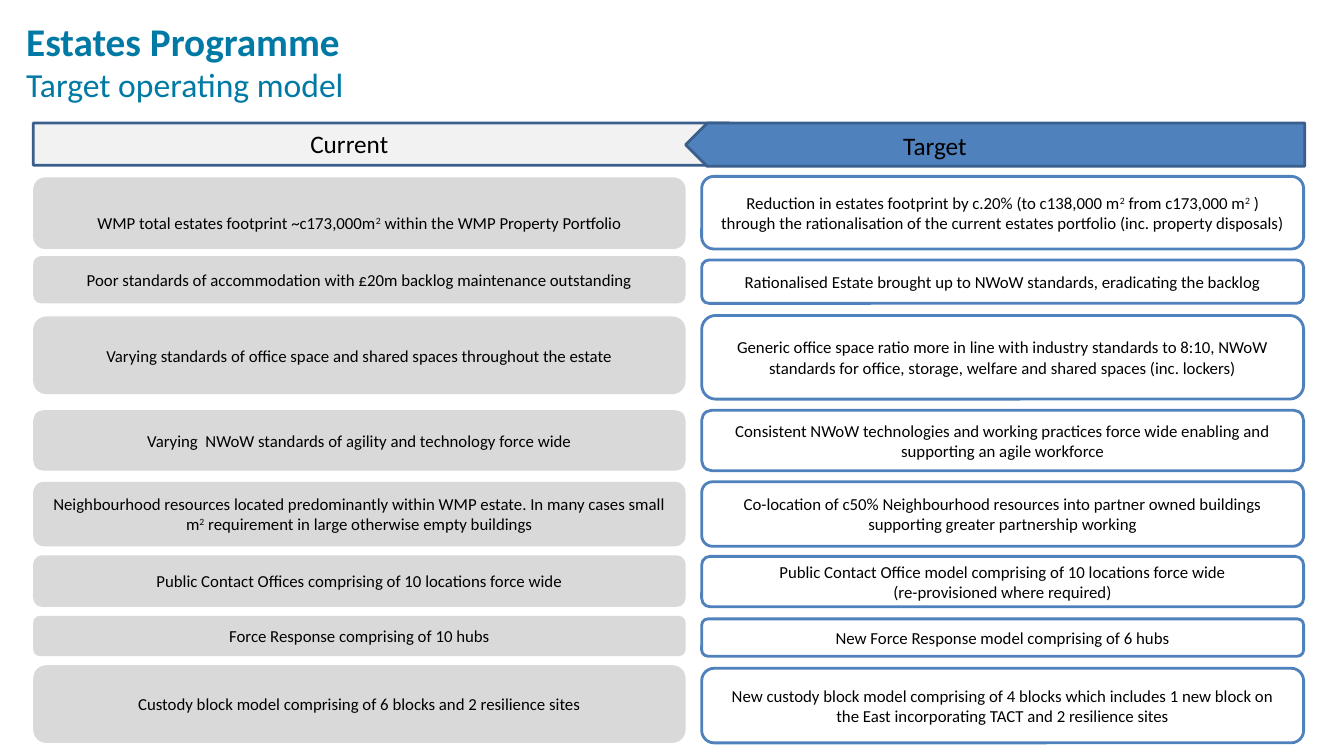
from pptx import Presentation
from pptx.dml.color import RGBColor
from pptx.enum.shapes import MSO_SHAPE
from pptx.enum.text import MSO_ANCHOR, MSO_AUTO_SIZE, PP_ALIGN
from pptx.util import Inches, Pt

ROUNDED = MSO_SHAPE.ROUNDED_RECTANGLE
PENTAGON = MSO_SHAPE.PENTAGON
MIDDLE, TOP = MSO_ANCHOR.MIDDLE, MSO_ANCHOR.TOP
LEFT, CENTER = PP_ALIGN.LEFT, PP_ALIGN.CENTER
NO_AUTOFIT = MSO_AUTO_SIZE.NONE

TEAL = RGBColor(0x00, 0x7A, 0xA5)
BLACK = RGBColor(0x00, 0x00, 0x00)
WHITE = RGBColor(0xFF, 0xFF, 0xFF)
GREY = RGBColor(0xD9, 0xD9, 0xD9)
PALE_GREY = RGBColor(0xF2, 0xF2, 0xF2)
BLUE = RGBColor(0x4F, 0x81, 0xBD)
DARK_BLUE = RGBColor(0x3A, 0x5F, 0x8C)

FONT = "Calibri"
CURRENT_LEFT, CURRENT_WIDTH = 0.33, 6.47
TARGET_LEFT, TARGET_WIDTH = 6.96, 5.97

# Each box: top, height, text; ^ marks the start and end of a superscript.
CURRENT_BOXES = [
    (1.76, 0.71, "WMP total estates footprint ~c173,000m^2^ within the WMP Property Portfolio"),
    (2.54, 0.47, "Poor standards of accommodation with £20m backlog maintenance outstanding"),
    (3.14, 0.77, "Varying standards of office space and shared spaces throughout the estate"),
    (4.07, 0.60, "Varying  NWoW standards of agility and technology force wide"),
    (4.78, 0.64, "Neighbourhood resources located predominantly within WMP estate. "
                 "In many cases small m^2^ requirement in large otherwise empty buildings"),
    (5.51, 0.51, "Public Contact Offices comprising of 10 locations force wide"),
    (6.11, 0.40, "Force Response comprising of 10 hubs"),
    (6.60, 0.77, "Custody block model comprising of 6 blocks and 2 resilience sites"),
]
TARGET_BOXES = [
    (1.75, 0.72, "Reduction in estates footprint by c.20% (to c138,000 m^2^ from c173,000 m^2^ ) "
                 "through the rationalisation of the current estates portfolio "
                 "(inc. property disposals)"),
    (2.58, 0.43, "Rationalised Estate brought up to NWoW standards, eradicating the backlog"),
    (3.13, 0.83, "Generic office space ratio more in line with industry standards to 8:10, NWoW "
                 "standards for office, storage, welfare and shared spaces (inc. lockers)"),
    (4.07, 0.60, "Consistent NWoW technologies and working practices force wide enabling and "
                 "supporting an agile workforce"),
    (4.78, 0.64, "Co-location of c50% Neighbourhood resources into partner owned buildings "
                 "supporting greater partnership working"),
    (5.52, 0.50, "Public Contact Office model comprising of 10 locations force wide\n"
                 "(re-provisioned where required)"),
    (6.14, 0.37, "New Force Response model comprising of 6 hubs"),
    (6.63, 0.74, "New custody block model comprising of 4 blocks which includes 1 new block on "
                 "the East incorporating TACT and 2 resilience sites"),
]


def style_font(font, size, color, bold=False):
    font.name = FONT
    font.size = Pt(size)
    font.color.rgb = color
    font.bold = bold


def set_margins(frame, left, top, right, bottom):
    frame.margin_left, frame.margin_top = Inches(left), Inches(top)
    frame.margin_right, frame.margin_bottom = Inches(right), Inches(bottom)


def add_title(slide, heading, subheading):
    title = slide.shapes.title
    title.left, title.top = Inches(0.26), Inches(0.15)
    title.width, title.height = Inches(12), Inches(1.2)
    frame = title.text_frame
    frame.auto_size = NO_AUTOFIT
    frame.vertical_anchor = TOP
    set_margins(frame, 0, 0.02, 0, 0)
    paragraph = frame.paragraphs[0]
    paragraph.alignment = LEFT
    heading_run = paragraph.add_run()
    heading_run.text = heading
    style_font(heading_run.font, 28, TEAL, bold=True)
    paragraph.add_line_break()
    subheading_run = paragraph.add_run()
    subheading_run.text = subheading
    style_font(subheading_run.font, 24, TEAL)


def add_filled_shape(slide, kind, left, top, width, height, fill, line=None):
    shape = slide.shapes.add_shape(kind, Inches(left), Inches(top), Inches(width), Inches(height))
    shape.shadow.inherit = False
    shape.fill.solid()
    shape.fill.fore_color.rgb = fill
    if line is None:
        shape.line.fill.background()
    else:
        shape.line.color.rgb = line
        shape.line.width = Pt(2)
    return shape


def add_header_label(slide, left, top, width, text):
    box = slide.shapes.add_textbox(Inches(left), Inches(top), Inches(width), Inches(0.4))
    box.text_frame.word_wrap = True
    paragraph = box.text_frame.paragraphs[0]
    paragraph.text = text
    style_font(paragraph.font, 18, BLACK)


def write_paragraph(paragraph, text):
    """Write centred text, raising the parts between ^ marks."""
    paragraph.alignment = CENTER
    style_font(paragraph.font, 12, BLACK)
    for index, part in enumerate(text.split("^")):
        run = paragraph.add_run()
        run.text = part
        if index % 2:
            run.font._element.set("baseline", "30000")


def add_statement(slide, left, top, width, height, text, fill, line=None):
    shape = add_filled_shape(slide, ROUNDED, left, top, width, height, fill, line)
    frame = shape.text_frame
    frame.word_wrap = True
    frame.vertical_anchor = MIDDLE
    set_margins(frame, 0.14, 0.07, 0.14, 0.07)
    for index, line_text in enumerate(text.split("\n")):
        paragraph = frame.add_paragraph() if index else frame.paragraphs[0]
        write_paragraph(paragraph, line_text)
    return shape


def main():
    presentation = Presentation()
    presentation.slide_width, presentation.slide_height = Inches(13.33), Inches(7.5)
    slide = presentation.slides.add_slide(presentation.slide_layouts[5])
    add_title(slide, "Estates Programme", "Target operating model")

    add_filled_shape(slide, PENTAGON, CURRENT_LEFT, 1.22, 7.11, 0.42, PALE_GREY, DARK_BLUE)
    target_header = add_filled_shape(slide, PENTAGON, 6.8, 1.22, 6.14, 0.43, BLUE, DARK_BLUE)
    target_header.rotation = 180
    add_header_label(slide, 2.98, 1.22, 1.34, "Current")
    add_header_label(slide, 8.86, 1.24, 1.42, "Target")

    current_shapes = [
        add_statement(slide, CURRENT_LEFT, top, CURRENT_WIDTH, height, text, GREY)
        for top, height, text in CURRENT_BOXES
    ]
    # The footprint statement sits below the middle of its box.
    current_shapes[0].text_frame.margin_top = Inches(0.27)
    for top, height, text in TARGET_BOXES:
        add_statement(slide, TARGET_LEFT, top, TARGET_WIDTH, height, text, WHITE, BLUE)

    presentation.save("out.pptx")


if __name__ == "__main__":
    main()
